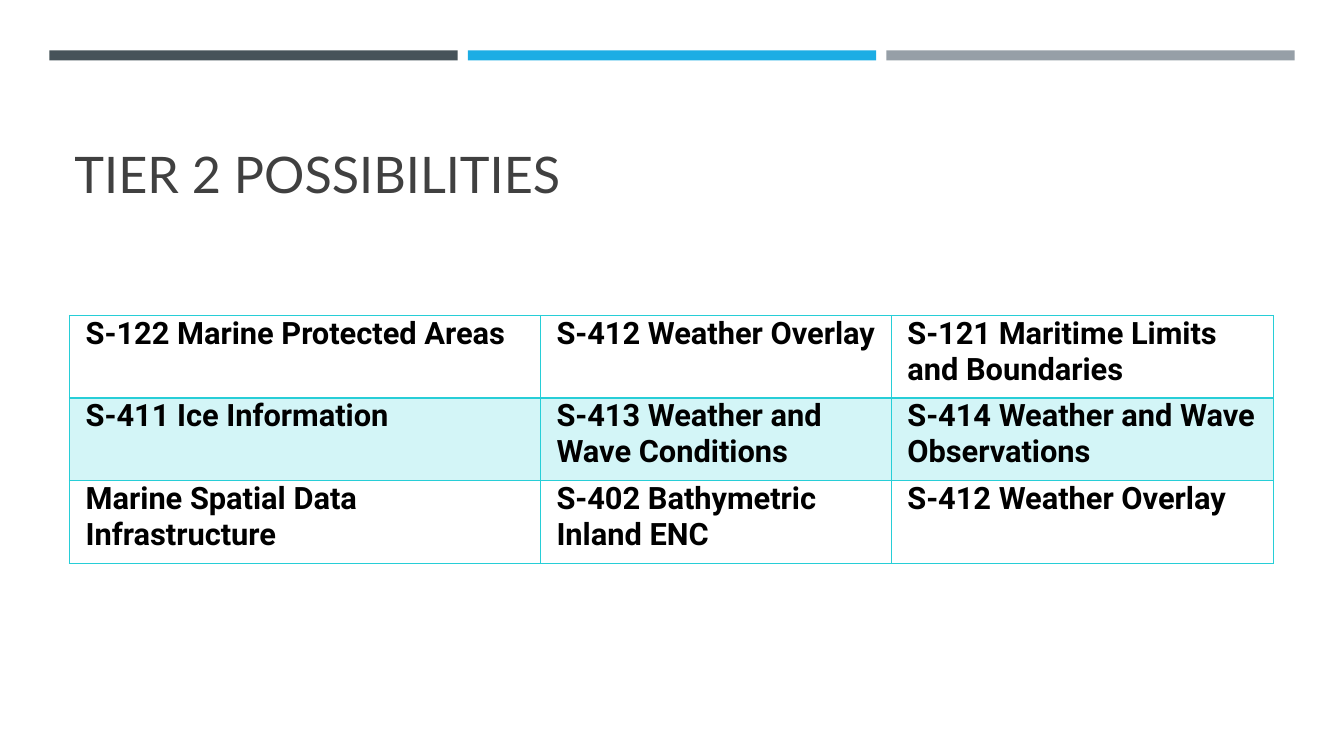
"""Build the slide of Tier 2 product possibilities."""
from lxml import etree
from pptx import Presentation
from pptx import util as u
from pptx.dml.color import RGBColor
from pptx.enum import shapes, text
from pptx.oxml.ns import qn

WIDE, HIGH = 13.33, 7.5
TEAL = "27CED7"
BARS = ["465359", "1CADE4", "969FA7"]
COLS = [4.67, 3.48, 3.79]
ROW = 0.82
ITEMS = [
    ["S-122 Marine Protected Areas", "S-412 Weather Overlay",
     "S-121 Maritime Limits and Boundaries"],
    ["S-411 Ice Information", "S-413 Weather and Wave Conditions",
     "S-414 Weather and Wave Observations"],
    ["Marine Spatial Data Infrastructure", "S-402 Bathymetric Inland ENC",
     "S-412 Weather Overlay"],
]


def color(code):
    """Turn a hex string into a colour."""
    return RGBColor.from_string(code)


def box(*sizes):
    """Turn inches into lengths."""
    return [u.Inches(size) for size in sizes]


def write(frame, words, font, size, code, bold=False):
    """Put one styled run into a text frame."""
    frame.word_wrap = True
    run = frame.paragraphs[0].add_run()
    run.text = words
    run.font.name = font
    run.font.size = u.Pt(size)
    run.font.bold = bold
    run.font.color.rgb = color(code)


def add_bars(slide):
    """Draw the row of coloured bars along the top."""
    for col, code in enumerate(BARS):
        bar = slide.shapes.add_shape(
            shapes.MSO_SHAPE.RECTANGLE, *box(0.49 + col * 4.15, 0.5, 4.05, 0.1))
        bar.shadow.inherit = False
        bar.fill.solid()
        bar.fill.fore_color.rgb = color(code)
        bar.line.fill.background()


def add_title(slide, words):
    """Place the heading on the bottom of its box."""
    frame = slide.shapes.add_textbox(*box(0.64, 0.77, 12.06, 1.3)).text_frame
    frame.vertical_anchor = text.MSO_ANCHOR.BOTTOM
    write(frame, words, "Lato", 36, "404040")


def edge(cell, side, width):
    """Draw one border of a cell."""
    line = etree.SubElement(cell._tc.get_or_add_tcPr(), qn("a:" + side),
                            w=str(u.Pt(width)))
    fill = etree.SubElement(line, qn("a:solidFill"))
    etree.SubElement(fill, qn("a:srgbClr"), val=TEAL)


def tint(cell, share):
    """Fill a cell with teal at a share of full strength."""
    cell.fill.solid()
    cell.fill.fore_color.rgb = color(TEAL)
    tone = cell._tc.tcPr.find(".//" + qn("a:solidFill") + "/" + qn("a:srgbClr"))
    etree.SubElement(tone, qn("a:alpha"), val=str(share * 1000))


def style(cell, words, row):
    """Set the text, fill and borders of a cell."""
    cell.margin_left = cell.margin_right = u.Inches(0.16)
    cell.margin_top = cell.margin_bottom = 0
    write(cell.text_frame, words, "Roboto", 22, "000000", True)
    if row == 1:
        tint(cell, 20)
    else:
        cell.fill.background()
    fill = cell._tc.tcPr[0]
    for side in ("lnL", "lnR", "lnT", "lnB"):
        thick = (row, side) in ((0, "lnB"), (1, "lnT"))
        edge(cell, side, 2 if thick else 1)
    cell._tc.tcPr.append(fill)


def add_grid(slide):
    """Add the table of products."""
    grid = slide.shapes.add_table(
        len(ITEMS), len(COLS),
        *box(0.69, 3.13, sum(COLS), ROW * len(ITEMS))).table
    grid.first_row = grid.horz_banding = False
    for col, wide in zip(grid.columns, COLS):
        col.width = u.Inches(wide)
    for row, line in enumerate(ITEMS):
        grid.rows[row].height = u.Inches(ROW)
        for col, words in enumerate(line):
            style(grid.cell(row, col), words, row)


def main():
    """Build and save the slide."""
    deck = Presentation()
    deck.slide_width, deck.slide_height = box(WIDE, HIGH)
    slide = deck.slides.add_slide(deck.slide_layouts[6])
    add_bars(slide)
    add_title(slide, "TIER 2 POSSIBILITIES")
    add_grid(slide)
    deck.save("out.pptx")


if __name__ == "__main__":
    main()
